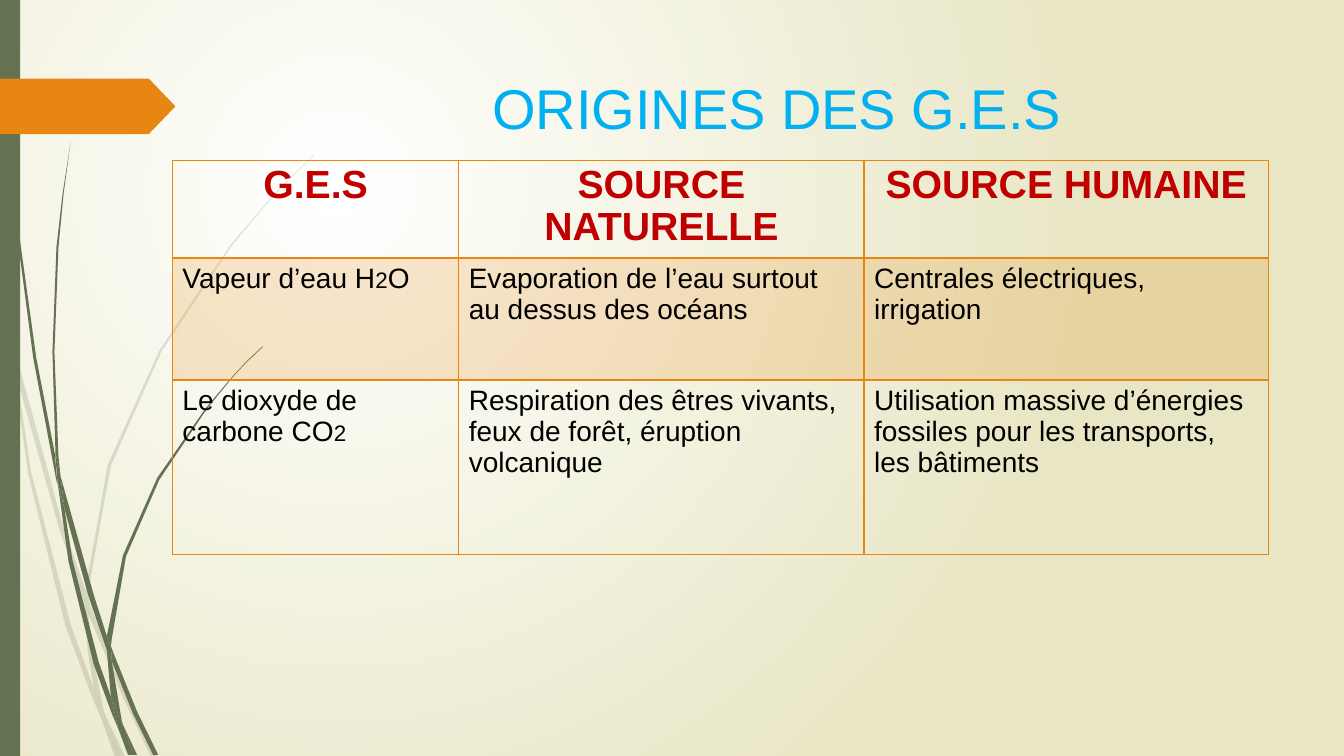
from lxml import etree
from pptx import Presentation
from pptx.dml.color import RGBColor
from pptx.enum.shapes import MSO_SHAPE
from pptx.enum.text import PP_ALIGN
from pptx.oxml import parse_xml
from pptx.oxml.ns import nsdecls, qn
from pptx.util import Inches, Pt

RECTANGLE, PENTAGON = MSO_SHAPE.RECTANGLE, MSO_SHAPE.PENTAGON
LEFT, CENTER = PP_ALIGN.LEFT, PP_ALIGN.CENTER
GREEN, ORANGE, RED, BLUE, BLACK = "647252", "E78712", "C00000", "00B0F0", "000000"

# Outlines of the grass pieces, in inches
PALE_GRASS = [
    [(0.11, 3.5), (0.09, 3.22), (0, 2.82), (0, 2.99), (0.1, 3.44)],
    [(0.58, 5.22), (0.84, 5.99), (0.85, 5.86), (0.62, 5.2), (0.14, 3.45), (0.17, 3.76)],
    [(0.92, 6.07), (0.88, 5.96), (0.88, 6.1), (1.23, 6.94), (1.5, 7.51), (1.55, 7.51),
     (1.27, 6.92)],
    [(1.19, 7.51), (1.24, 7.51), (1.05, 7.11)],
    [(0.93, 6.83), (0.7, 6.19), (0.31, 4.69), (0.17, 3.76), (0.11, 3.5), (0.28, 4.7),
     (0.65, 6.21), (0.92, 6.93), (1.01, 7.14), (0.99, 7.07)],
    [(0.84, 5.99), (0.87, 6.46), (0.93, 6.83), (0.96, 6.92), (1.05, 7.11), (1.03, 7.06),
     (0.91, 6.46), (0.88, 6.1), (0.88, 6.08)],
    [(0.88, 5.84), (1.1, 4.62), (1.6, 3.49), (2.29, 2.45), (2.68, 1.98), (2.9, 1.75),
     (3.12, 1.54), (3.12, 1.53), (2.89, 1.75), (2.68, 1.97), (2.28, 2.44), (1.58, 3.48),
     (1.07, 4.61), (0.85, 5.84), (0.85, 5.86), (0.88, 5.96)],
    [(1.01, 7.14), (1.14, 7.51), (1.19, 7.51)],
    [(0.88, 6.08), (0.88, 6.1), (0.88, 5.96), (0.85, 5.86), (0.84, 5.99)],
    [(0.96, 6.92), (0.93, 6.83), (0.99, 7.07), (1.01, 7.14), (1.19, 7.51), (1.05, 7.11)],
]
DARK_GRASS = [
    [(0.07, 1.1), (0.17, 2.33), (0.33, 3.55), (0.56, 4.77), (0.57, 4.81), (0.55, 4.57),
     (0.55, 4.53), (0.36, 3.55), (0.19, 2.32), (0.08, 1.09), (0.05, 0.48), (0.04, 0),
     (0.03, 0), (0.04, 0.48)],
    [(0.88, 5.92), (1.06, 6.45), (1.06, 6.33), (1.06, 6.31), (0.93, 5.9), (0.6, 4.72),
     (0.64, 5.05)],
    [(1.13, 6.49), (1.1, 6.41), (1.11, 6.56), (1.32, 7.08), (1.52, 7.49), (1.57, 7.49),
     (1.36, 7.06)],
    [(1.1, 6.91), (0.98, 6.57), (0.72, 5.56), (0.64, 5.05), (0.57, 4.77), (0.68, 5.57),
     (0.93, 6.59), (1.11, 7.08), (1.17, 7.22), (1.16, 7.17)],
    [(0.6, 4.72), (0.58, 4.53), (0.54, 3.49), (0.58, 2.45), (0.63, 1.93), (0.7, 1.41),
     (0.62, 1.93), (0.56, 2.45), (0.52, 3.49), (0.55, 4.49)],
    [(1.33, 7.49), (1.36, 7.49), (1.22, 7.19)],
    [(0.57, 4.77), (0.64, 5.05), (0.6, 4.72), (0.55, 4.49), (0.55, 4.53)],
    [(1.11, 6.33), (1.25, 5.52), (1.58, 4.76), (2.05, 4.06), (2.31, 3.74), (2.45, 3.59),
     (2.61, 3.44), (2.6, 3.44), (2.45, 3.58), (2.31, 3.73), (2.04, 4.05), (1.56, 4.74),
     (1.22, 5.51), (1.06, 6.31), (1.1, 6.41)],
    [(1.17, 7.22), (1.27, 7.49), (1.31, 7.49)],
    [(1.06, 6.45), (1.1, 6.91), (1.16, 7.06), (1.22, 7.19), (1.21, 7.16), (1.11, 6.56),
     (1.09, 6.51)],
    [(1.06, 6.45), (1.09, 6.51), (1.11, 6.56), (1.1, 6.41), (1.06, 6.31), (1.06, 6.33)],
    [(1.16, 7.06), (1.1, 6.91), (1.16, 7.17), (1.17, 7.22), (1.3, 7.49), (1.33, 7.49),
     (1.22, 7.19)],
]

COLUMN_WIDTHS = [2.84, 4.02, 4.01]
ROW_HEIGHTS = [0.97, 1.21, 1.73]
HEADINGS = ["G.E.S", "SOURCE NATURELLE", "SOURCE HUMAINE"]
# Each cell is a list of (text, size)
GASES = [
    [[("Vapeur d’eau H", 20), ("2", 16), ("O", 20)],
     [("Evaporation de l’eau surtout au dessus des océans", 20)],
     [("Centrales électriques, irrigation", 20)]],
    [[("Le dioxyde de carbone CO", 20), ("2", 16)],
     [("Respiration des êtres vivants, feux de forêt, éruption volcanique", 20)],
     [("Utilisation massive d’énergies fossiles pour les transports, "
       "les bâtiments", 20)]],
]


def rgb(color):
    return RGBColor.from_string(color)


def paint(fill, color, opacity=100):
    fill.solid()
    fill.fore_color.rgb = rgb(color)
    if opacity < 100:
        tint = fill._xPr.find(qn("a:solidFill")).find(qn("a:srgbClr"))
        etree.SubElement(tint, qn("a:alpha"), val=str(opacity * 1000))


def finish(shape, color, opacity=100):
    shape.shadow.inherit = False
    paint(shape.fill, color, opacity)
    shape.line.fill.background()


def write(para, text, size=20, color=BLACK, bold=False, align=LEFT):
    para.alignment = align
    span = para.add_run()
    span.text = text
    span.font.name = "Arial"
    span.font.size = Pt(size)
    span.font.bold = bold
    span.font.color.rgb = rgb(color)


def add_grass(page, outline, opacity):
    points = [(Inches(x), Inches(y)) for x, y in outline]
    builder = page.shapes.build_freeform(*points[0])
    builder.add_line_segments(points[1:], close=True)
    finish(builder.convert_to_shape(), GREEN, opacity)


def add_block(page, kind, left, top, width, height, color):
    block = page.shapes.add_shape(
        kind, Inches(left), Inches(top), Inches(width), Inches(height))
    finish(block, color)
    return block


def set_background(page):
    fill = page.background.fill
    fill.gradient()
    for stop, color, position in zip(fill.gradient_stops, ("FFFFFF", "E8E6C4"), (0, 1)):
        stop.color.rgb = rgb(color)
        stop.position = position
    gradient = next(page.element.iter(qn("a:gradFill")))
    gradient.replace(gradient.find(qn("a:lin")), parse_xml(
        f'<a:path {nsdecls("a")} path="circle"><a:fillToRect l="50000" t="50000" '
        'r="100000" b="100000"/></a:path>'))


def add_title(page, text):
    box = page.shapes.add_textbox(Inches(2.83), Inches(0.68), Inches(9.75), Inches(1.4))
    box.text_frame.word_wrap = True
    write(box.text_frame.paragraphs[0], text, size=40, color=BLUE, align=CENTER)


def set_borders(cell, top=1, bottom=1):
    properties = cell._tc.get_or_add_tcPr()
    for side, width in (("L", 1), ("R", 1), ("T", top), ("B", bottom)):
        properties.append(parse_xml(
            f'<a:ln{side} {nsdecls("a")} w="{Pt(width)}"><a:solidFill>'
            f'<a:srgbClr val="{ORANGE}"/></a:solidFill></a:ln{side}>'))


def add_gas_table(page):
    table = page.shapes.add_table(
        len(ROW_HEIGHTS), len(COLUMN_WIDTHS), Inches(1.71), Inches(1.59),
        Inches(sum(COLUMN_WIDTHS)), Inches(sum(ROW_HEIGHTS))).table
    table.first_row = table.horz_banding = False
    for column, width in zip(table.columns, COLUMN_WIDTHS):
        column.width = Inches(width)
    for row, height in zip(table.rows, ROW_HEIGHTS):
        row.height = Inches(height)

    # Header row
    for cell, heading in zip(table.rows[0].cells, HEADINGS):
        set_borders(cell, bottom=2)
        cell.fill.background()
        cell.margin_bottom = Inches(0.01)
        para = cell.text_frame.paragraphs[0]
        para.line_spacing = 0.96
        write(para, heading, size=28, color=RED, bold=True, align=CENTER)

    # One row for each gas, the first one tinted
    for number, contents in enumerate(GASES, start=1):
        for cell, spans in zip(table.rows[number].cells, contents):
            set_borders(cell, top=2 if number == 1 else 1)
            if number == 1:
                paint(cell.fill, ORANGE, opacity=20)
            else:
                cell.fill.background()
            for text, size in spans:
                write(cell.text_frame.paragraphs[0], text, size=size)


def main():
    deck = Presentation()
    deck.slide_width, deck.slide_height = Inches(13.33), Inches(7.5)
    page = deck.slides.add_slide(deck.slide_layouts[6])
    set_background(page)

    # Grass, side bar and arrow tab
    for pieces, opacity in ((PALE_GRASS, 20), (DARK_GRASS, 100)):
        for outline in pieces:
            add_grass(page, outline, opacity)
    add_block(page, RECTANGLE, 0, 0, 0.2, 7.5, GREEN)
    tab = add_block(page, PENTAGON, 0, 0.78, 1.74, 0.55, ORANGE)
    tab.adjustments[0] = 0.48

    add_title(page, "ORIGINES DES G.E.S")
    add_gas_table(page)
    deck.save("out.pptx")


if __name__ == "__main__":
    main()
